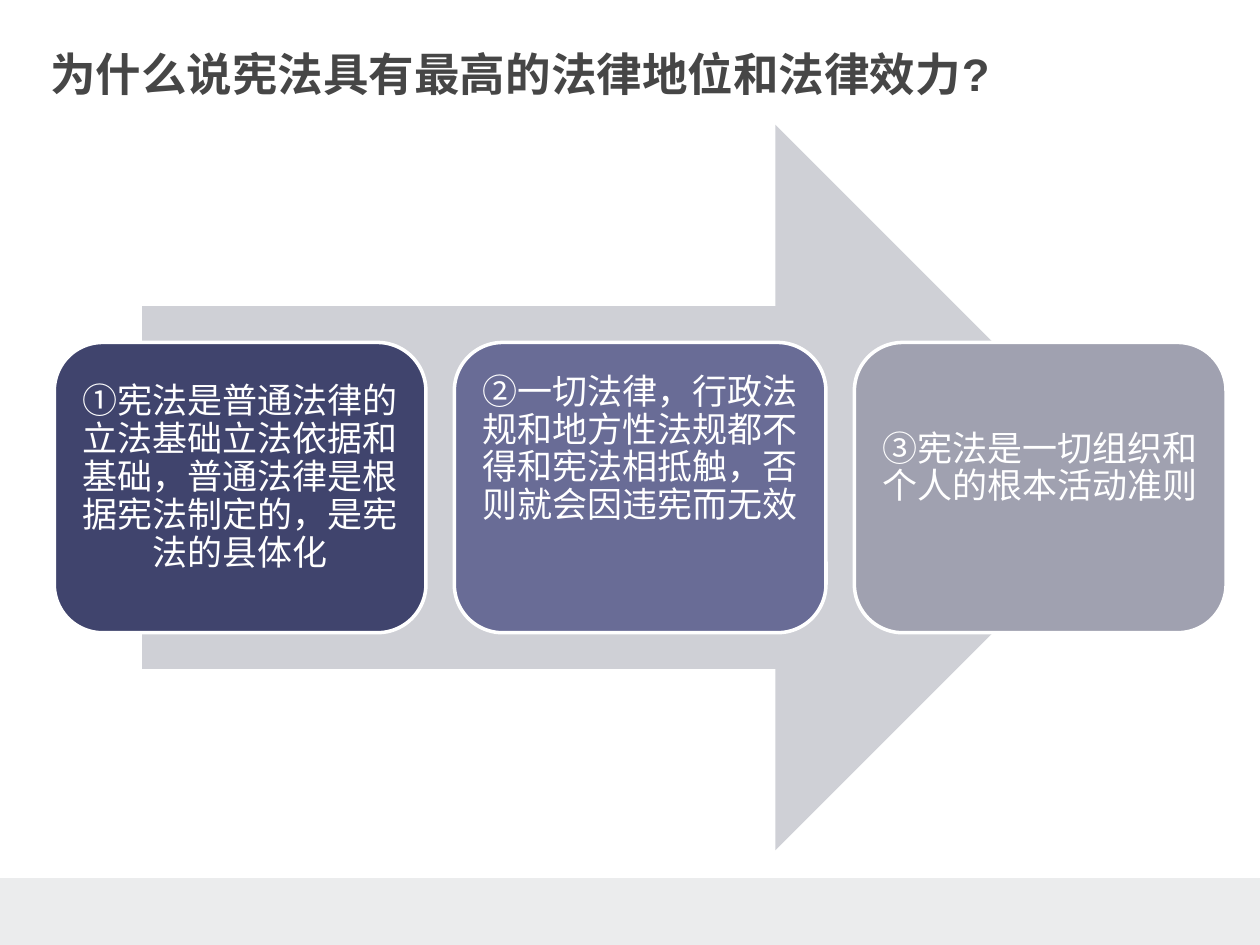
from dataclasses import dataclass

from pptx import Presentation
from pptx.dml.color import RGBColor
from pptx.enum.shapes import MSO_SHAPE
from pptx.enum.text import MSO_ANCHOR, PP_ALIGN
from pptx.util import Pt


@dataclass(frozen=True)
class Theme:
    """Colours, font and type sizes of the slide."""
    font: str = "Arial"
    title_size: float = 26
    card_size: float = 20
    title: str = "464646"
    white: str = "FFFFFF"
    footer: str = "EBECED"
    arrow: str = "CFD0D6"
    cards: tuple = ("40446D", "696C96", "A0A1B0")


THEME = Theme()
LINE_PITCH = 21.7
CARD_INSET = 5.76
TITLE = "为什么说宪法具有最高的法律地位和法律效力?"
REASONS = (
    ("①宪法是普通法律的立法基础立法依据和基础，普通法律是根据宪法制定的，是宪法的县体化", 0.5),
    ("②一切法律，行政法规和地方性法规都不得和宪法相抵触，否则就会因违宪而无效", 2),
    ("③宪法是一切组织和个人的根本活动准则", 1),
)


def add_filled(slide, preset, box, color):
    """Add a preset shape with a plain fill and no line or shadow."""
    shape = slide.shapes.add_shape(preset, *map(Pt, box))
    shape.shadow.inherit = False
    shape.fill.solid()
    shape.fill.fore_color.rgb = RGBColor.from_string(color)
    shape.line.fill.background()
    return shape


def write(frame, text, size, color, align, insets, bold=False):
    """Write one paragraph, centred vertically between the insets."""
    frame.word_wrap = True
    frame.vertical_anchor = MSO_ANCHOR.MIDDLE
    frame.margin_left, frame.margin_top, frame.margin_right, frame.margin_bottom = map(Pt, insets)
    paragraph = frame.paragraphs[0]
    paragraph.text = text
    paragraph.alignment = align
    paragraph.font.name = THEME.font
    paragraph.font.size = Pt(size)
    paragraph.font.bold = bold
    paragraph.font.color.rgb = RGBColor.from_string(color)
    return paragraph


def add_title(slide, box):
    """Place the question at the top of the slide."""
    title = slide.shapes.add_textbox(*map(Pt, box))
    write(title.text_frame, TITLE, THEME.title_size, THEME.title,
          PP_ALIGN.LEFT, (0, 0, 0, 0), bold=True)


def add_card(slide, box, color, reason, lift):
    """Place one reason, raised by half of the given number of lines."""
    card = add_filled(slide, MSO_SHAPE.ROUNDED_RECTANGLE, box, color)
    card.line.color.rgb = RGBColor.from_string(THEME.white)
    card.line.width = Pt(2)
    insets = (CARD_INSET, CARD_INSET, CARD_INSET, CARD_INSET + lift * LINE_PITCH)
    paragraph = write(card.text_frame, reason, THEME.card_size, THEME.white,
                      PP_ALIGN.CENTER, insets)
    paragraph.line_spacing = 0.9


def add_process(slide, box):
    """Place the arrow and an even row of cards across its middle."""
    left, top, width, height = box
    arrow_width = width * 0.85
    add_filled(slide, MSO_SHAPE.RIGHT_ARROW,
               (left + (width - arrow_width) / 2, top, arrow_width, height), THEME.arrow)
    card_width, card_height = 212.4, height * 0.4
    step = (width - card_width) / (len(REASONS) - 1)
    for index, (color, (reason, lift)) in enumerate(zip(THEME.cards, REASONS)):
        card_box = (left + index * step, top + (height - card_height) / 2,
                    card_width, card_height)
        add_card(slide, card_box, color, reason, lift)


def main():
    """Build the slide and save it."""
    deck = Presentation()
    deck.slide_width, deck.slide_height = Pt(720), Pt(540)
    slide = deck.slides.add_slide(deck.slide_layouts[6])
    add_filled(slide, MSO_SHAPE.RECTANGLE, (0, 501.8, 720, 38.2), THEME.footer)
    add_title(slide, (28.8, 26.6, 662.4, 31))
    add_process(slide, (31, 71.3, 669.6, 414.7))
    deck.save("out.pptx")


if __name__ == "__main__":
    main()
